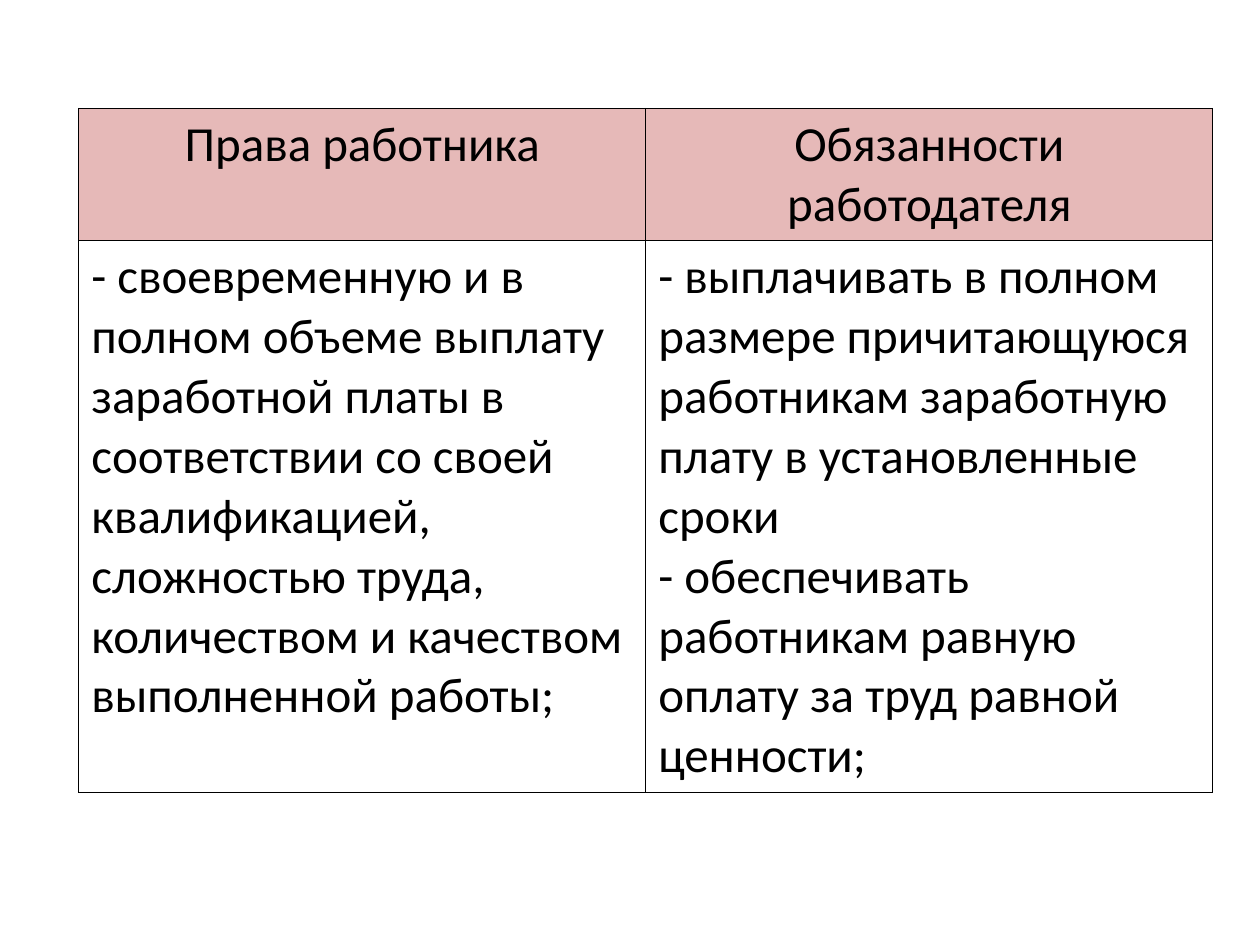
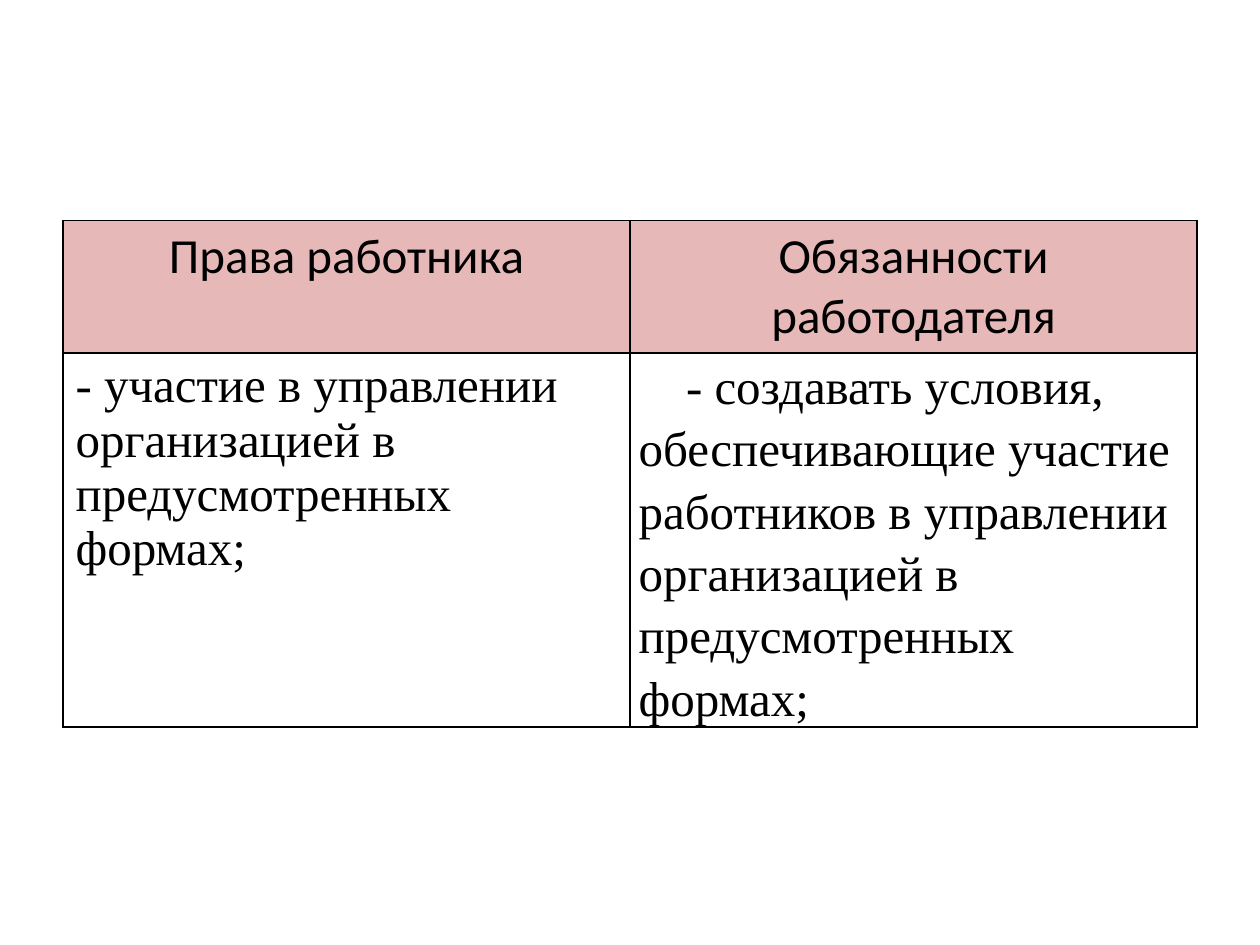
from dataclasses import dataclass
from lxml import etree
from pptx import Presentation
from pptx.dml.color import RGBColor
from pptx.enum import text as t
from pptx.oxml import ns
from pptx.util import Pt

HEADS = ["Права работника", "Обязанности работодателя"]

PAY = [
    ["- своевременную и в полном объеме выплату заработной платы в соответствии "
     "со своей квалификацией, сложностью труда, количеством и качеством "
     "выполненной работы;"],
    ["- выплачивать в полном размере причитающуюся работникам заработную плату "
     "в установленные сроки",
     "- обеспечивать работникам равную оплату за труд равной ценности;"],
]
VOICE = [
    ["- участие в управлении организацией в предусмотренных формах;"],
    ["- создавать условия, обеспечивающие участие работников в управлении "
     "организацией в предусмотренных формах;"],
]


@dataclass(frozen=True)
class Theme:
    ink: str = "000000"
    band: str = "E6B9B8"
    sans: str = "Calibri"
    serif: str = "Times New Roman"
    size: int = 28
    col: int = 324
    head: int = 75


T = Theme()
SLIDES = [
    dict(duties=PAY, left=45, top=62, body=315, font=T.sans, rule=0.75),
    dict(duties=VOICE, left=36, top=126, body=213, font=T.serif, rule=1),
]


def border(cell, width):
    props = cell._tc.get_or_add_tcPr()
    for side in ("lnL", "lnR", "lnT", "lnB"):
        line = etree.SubElement(props, ns.qn("a:" + side), w=str(Pt(width)))
        fill = etree.SubElement(line, ns.qn("a:solidFill"))
        etree.SubElement(fill, ns.qn("a:srgbClr"), val=T.ink)


def write(cell, lines, font, align, rule, band=None):
    border(cell, rule)
    if band:
        cell.fill.solid()
        cell.fill.fore_color.rgb = RGBColor.from_string(band)
    else:
        cell.fill.background()
    cell.text_frame.text = "\n".join(lines)
    for par in cell.text_frame.paragraphs:
        par.alignment = align
        for run in par.runs:
            run.font.name = font
            run.font.size = Pt(T.size)
            run.font.color.rgb = RGBColor.from_string(T.ink)


def indent(cell):
    cell.margin_left = cell.margin_right = Pt(5)
    cell.margin_top = cell.margin_bottom = Pt(0)
    for par in cell.text_frame.paragraphs:
        par.line_spacing = 1.15
        par.space_after = Pt(10)
        props = par._p.get_or_add_pPr()
        props.set("marL", "0")
        props.set("indent", str(Pt(27)))


def build(deck, duties, left, top, body, font, rule):
    slide = deck.slides.add_slide(deck.slide_layouts[6])
    table = slide.shapes.add_table(
        2, len(HEADS), Pt(left), Pt(top),
        Pt(T.col * len(HEADS)), Pt(T.head + body)).table
    table.first_row = table.horz_banding = False
    table.rows[0].height, table.rows[1].height = Pt(T.head), Pt(body)
    for i, (head, lines) in enumerate(zip(HEADS, duties)):
        table.columns[i].width = Pt(T.col)
        write(table.cell(0, i), [head], T.sans, t.PP_ALIGN.CENTER, rule, T.band)
        write(table.cell(1, i), lines, font, t.PP_ALIGN.LEFT, rule)
    return table


def main():
    deck = Presentation()
    deck.slide_width, deck.slide_height = Pt(720), Pt(540)
    tables = [build(deck, **page) for page in SLIDES]
    indent(tables[1].cell(1, 1))
    deck.save("out.pptx")


if __name__ == "__main__":
    main()
